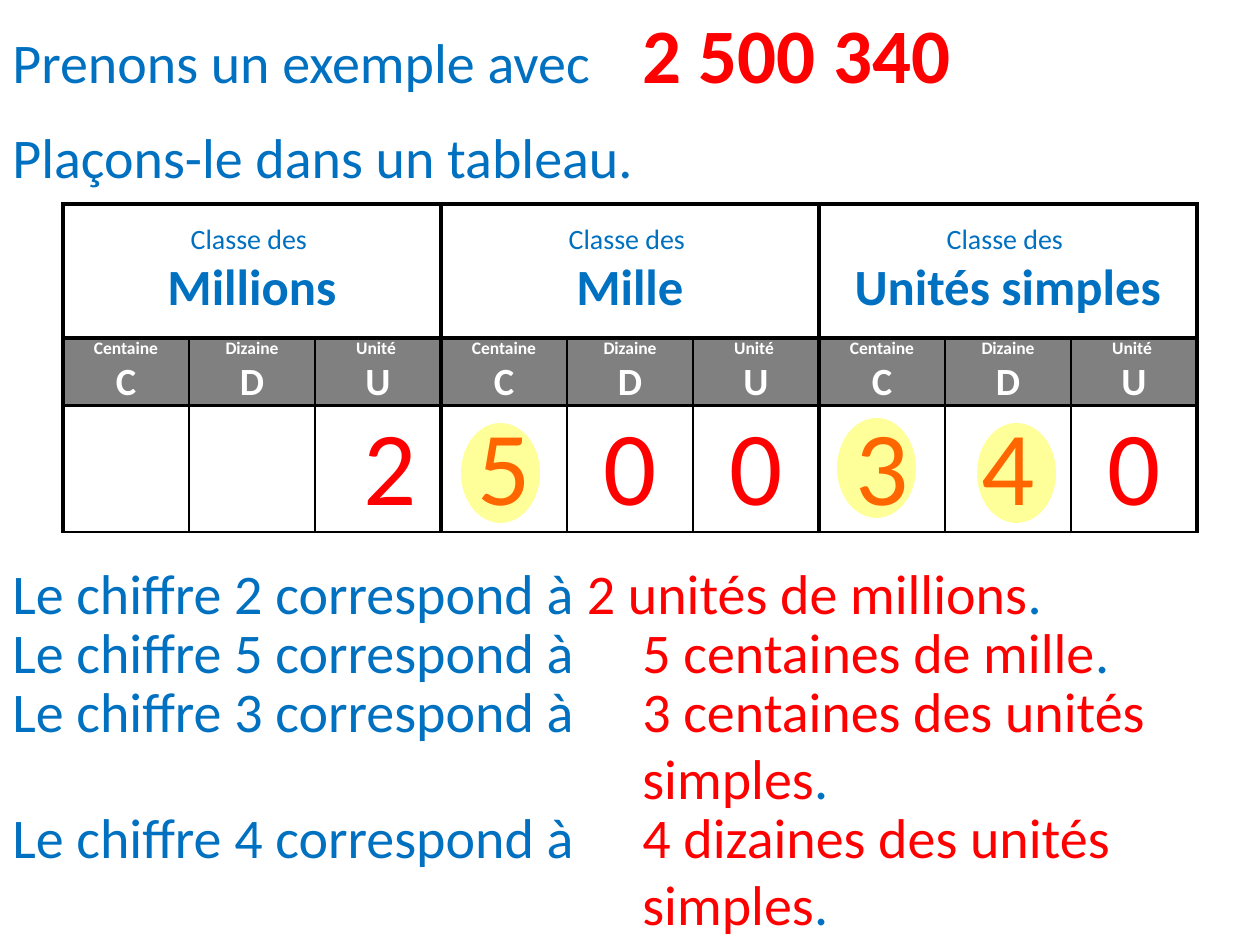
from pptx import Presentation
from pptx.dml.color import RGBColor as RGB
from pptx.enum.shapes import MSO_SHAPE as SHAPE
from pptx.enum.text import MSO_ANCHOR as ANCHOR, PP_ALIGN as ALIGN
from pptx.oxml.ns import qn
from pptx.util import Pt
from lxml.etree import SubElement

PX = 914400 / 126
COLORS = {"blue": "0070C0", "red": "FF0000", "white": "FFFFFF",
          "grey": "808080", "black": "000000", "yellow": "FFFF00"}
THICK, THIN = 2.25, 1


def px(n):
    return round(n * PX)


class Deck:
    font = "Calibri"

    def __init__(self, width, height):
        self.prs = Presentation()
        self.prs.slide_width, self.prs.slide_height = px(width), px(height)
        self.s = self.prs.slides.add_slide(self.prs.slide_layouts[6])

    def run(self, p, text, size, color, bold=False):
        r = p.add_run()
        r.text = text
        r.font.name, r.font.size, r.font.bold = self.font, Pt(size), bold
        r.font.color.rgb = RGB.from_string(COLORS[color])

    def text(self, x, y, w, h, *runs):
        tf = self.s.shapes.add_textbox(px(x), px(y), px(w), px(h)).text_frame
        tf.word_wrap = True
        for r in runs:
            self.run(tf.paragraphs[0], *r)

    def highlight(self, x, y, w, h):
        sp = self.s.shapes.add_shape(SHAPE.OVAL, px(x), px(y), px(w), px(h))
        sp.shadow.inherit = False
        sp.line.fill.background()
        sp.fill.solid()
        sp.fill.fore_color.rgb = RGB.from_string(COLORS["yellow"])
        color = sp.fill._xPr.find(qn("a:solidFill"))[0]
        SubElement(color, qn("a:alpha"), val="40000")

    def table(self, x, y, col_widths, row_heights):
        frame = self.s.shapes.add_table(
            len(row_heights), len(col_widths), px(x), px(y),
            px(sum(col_widths)), px(sum(row_heights)))
        table = frame.table
        table.first_row = table.horz_banding = False
        for col, w in zip(table.columns, col_widths):
            col.width = px(w)
        for row, h in zip(table.rows, row_heights):
            row.height = px(h)
        return table

    def cell(self, cell, lines, fill, borders):
        """Each line is one paragraph; borders are left, right, top, bottom."""
        cell.vertical_anchor = ANCHOR.MIDDLE
        cell.margin_left = cell.margin_right = px(8)
        cell.margin_top = cell.margin_bottom = 0
        tc_pr = cell._tc.get_or_add_tcPr()
        for side, width in zip("LRTB", borders):
            ln = SubElement(tc_pr, qn(f"a:ln{side}"), w=str(Pt(width)))
            solid = SubElement(ln, qn("a:solidFill"))
            SubElement(solid, qn("a:srgbClr"), val=COLORS["black"])
        if fill:
            cell.fill.solid()
            cell.fill.fore_color.rgb = RGB.from_string(COLORS[fill])
        else:
            cell.fill.background()
        tf = cell.text_frame
        for i, line in enumerate(lines):
            p = tf.add_paragraph() if i else tf.paragraphs[0]
            p.alignment = ALIGN.CENTER
            self.run(p, *line)


def main():
    deck = Deck(1260, 945)

    # Introduction
    deck.text(0, 0, 1260, 106, ("Prenons un exemple avec \t", 32, "blue"),
              ("2 500 340", 44, "red", True))
    deck.text(0, 116, 1260, 81, ("Plaçons-le dans un tableau.", 32, "blue"))

    # Place value table: three classes of three ranks
    classes = ["Millions", "Mille", "Unités simples"]
    ranks = [("Centaine", "C"), ("Dizaine", "D"), ("Unité ", "U")]
    digits = ["", "", " 2", "5", "0", "0", "3", "4", "0"]
    table = deck.table(63, 204, [126] * 9, [134, 67, 127])
    for col, digit in enumerate(digits):
        place = col % 3
        sides = (THIN if place else THICK, THICK if place == 2 else THIN)
        head = table.cell(0, col)
        lines = []
        if place == 0:
            head.merge(table.cell(0, col + 2))
            lines = [("Classe des ", 16, "blue"),
                     (classes[col // 3], 29, "blue", True)]
        deck.cell(head, lines, "white", [THICK] * 4)
        name, letter = ranks[place]
        deck.cell(table.cell(1, col),
                  [(name, 10, "white", True), (letter, 22, "white", True)],
                  "grey", (*sides, THICK, THICK))
        deck.cell(table.cell(2, col),
                  [(digit, 60, "red")] if digit else [],
                  None, (*sides, THICK, THIN))

    # Highlighted digits
    for x, y in [(461, 423), (837, 418), (977, 423)]:
        deck.highlight(x, y, 79, 100)

    # Value of each digit
    deck.text(0, 552, 1260, 81, ("Le chiffre 2 correspond à ", 32, "blue"),
              ("2 unités de millions", 32, "red"), (".", 32, "blue"))
    answers = [(611, "5", "centaines de mille", 523, 81),
               (670, "3", "centaines des unités simples", 630, 149),
               (796, "4", "dizaines des unités simples", 630, 149)]
    for y, digit, value, w, h in answers:
        deck.text(0, y, 650, 81,
                  (f"Le chiffre {digit} correspond à", 32, "blue"))
        deck.text(630, y, w, h, (f"{digit} {value}", 32, "red"),
                  (".", 32, "blue"))

    deck.prs.save("out.pptx")


if __name__ == "__main__":
    main()
